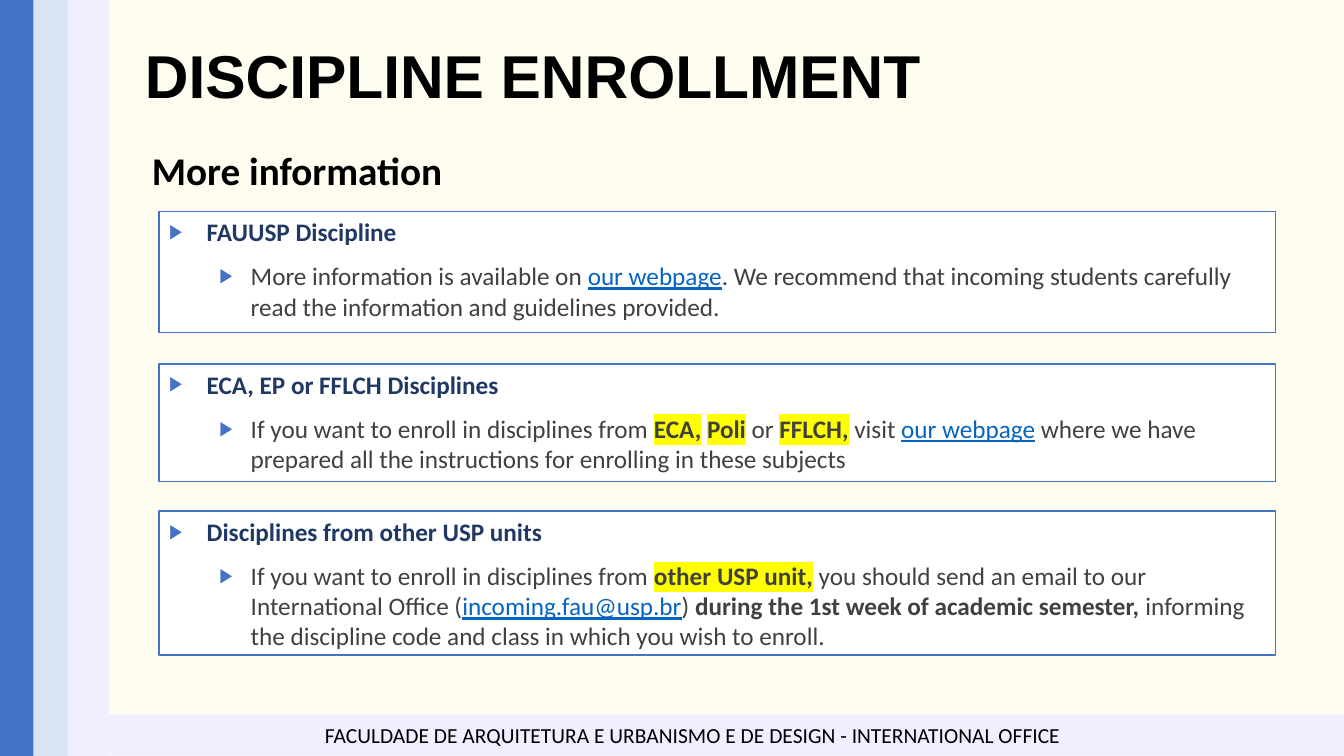
from dataclasses import dataclass

from lxml import etree
from pptx import Presentation
from pptx import util as u
from pptx.dml.color import RGBColor
from pptx.enum import shapes, text
from pptx.oxml import ns

BLUE = RGBColor(0x44, 0x72, 0xC4)
PALE_BLUE = RGBColor(0xDA, 0xE3, 0xF3)
LAVENDER = RGBColor(0xEF, 0xEF, 0xFF)
CREAM = RGBColor(0xFE, 0xFD, 0xF0)
WHITE = RGBColor(0xFF, 0xFF, 0xFF)
BLACK = RGBColor(0x00, 0x00, 0x00)
NAVY = RGBColor(0x20, 0x38, 0x64)
GREY = RGBColor(0x40, 0x40, 0x40)
LINK = RGBColor(0x05, 0x63, 0xC1)
YELLOW = RGBColor(0xFF, 0xFF, 0x00)

PAGE_WIDTH, PAGE_HEIGHT = 33.87, 19.05
CONTENT_WIDTH = 28.14
BAR_WIDTH = 1.04
CARD_LEFT = 4.01


@dataclass(frozen=True)
class Area:
    """Left, top, width and height in centimetres."""
    left: float
    top: float
    width: float
    height: float

    def lengths(self) -> tuple:
        return u.Cm(self.left), u.Cm(self.top), u.Cm(self.width), u.Cm(self.height)


@dataclass(frozen=True)
class Span:
    text: str
    color: RGBColor = GREY
    bold: bool = False
    underline: bool = False
    marked: bool = False


@dataclass(frozen=True)
class Bar:
    area: Area
    color: RGBColor


@dataclass(frozen=True)
class Card:
    top: float
    height: float
    heading: str
    body: tuple[Span, ...]


def link(words: str) -> Span:
    return Span(words, LINK, underline=True)


def marked(words: str) -> Span:
    return Span(words, bold=True, marked=True)


BARS = (
    Bar(Area(0, 0, BAR_WIDTH, PAGE_HEIGHT), BLUE),
    Bar(Area(0.84, 0, BAR_WIDTH, PAGE_HEIGHT), PALE_BLUE),
    Bar(Area(1.7, 0, BAR_WIDTH, PAGE_HEIGHT), LAVENDER),
    Bar(Area(2.73, 18, PAGE_WIDTH - 2.73, BAR_WIDTH), LAVENDER),
)

CARDS = (
    Card(5.33, 3.05, "FAUUSP Discipline", (
        Span("More information is available on "),
        link("our webpage"),
        Span(". We recommend that incoming students carefully read the "
             "information and guidelines provided."),
    )),
    Card(9.17, 2.97, "ECA, EP or FFLCH Disciplines", (
        Span("If you want to enroll in disciplines from "),
        marked("ECA,"),
        Span(" "),
        marked("Poli"),
        Span(" or "),
        marked("FFLCH,"),
        Span(" visit "),
        link("our webpage"),
        Span(" where we have prepared all the instructions for enrolling "
             "in these subjects"),
    )),
    Card(12.88, 3.63, "Disciplines from other USP units", (
        Span("If you want to enroll in disciplines from "),
        marked("other USP unit,"),
        Span(" you should send an email to our International Office ("),
        link("incoming.fau@usp.br"),
        Span(") "),
        Span("during the 1st week of academic semester,", bold=True),
        Span(" informing the discipline code and class in which you wish to enroll."),
    )),
)


def add_rectangle(page, area: Area, color: RGBColor):
    box = page.shapes.add_shape(shapes.MSO_SHAPE.RECTANGLE, *area.lengths())
    box.shadow.inherit = False
    box.fill.solid()
    box.fill.fore_color.rgb = color
    box.line.fill.background()
    return box


def add_color(parent, tag: str, color: RGBColor):
    element = etree.SubElement(parent, ns.qn(tag))
    etree.SubElement(element, ns.qn("a:srgbClr"), val=str(color))
    return element


def add_bullet(para, left: float, indent: float) -> None:
    properties = para._p.get_or_add_pPr()
    properties.set("marL", str(u.Cm(left)))
    properties.set("indent", str(u.Cm(indent)))
    add_color(properties, "a:buClr", BLUE)
    etree.SubElement(properties, ns.qn("a:buSzPct"), val="80000")
    etree.SubElement(properties, ns.qn("a:buFont"), typeface="Arial")
    etree.SubElement(properties, ns.qn("a:buChar"), char="▶")


def format_run(run, size: float, color: RGBColor, bold: bool, font: str = "Calibri") -> None:
    run.font.size = u.Pt(size)
    run.font.name = font
    run.font.bold = bold
    run.font.color.rgb = color


def add_span(para, span: Span) -> None:
    run = para.add_run()
    run.text = span.text
    format_run(run, 18, span.color, span.bold)
    if span.underline:
        run.font.underline = True
    if span.marked:
        properties = run._r.get_or_add_rPr()
        highlight = add_color(properties, "a:highlight", YELLOW)
        properties.find(ns.qn("a:solidFill")).addnext(highlight)


def add_card(page, card: Card) -> None:
    box = add_rectangle(page, Area(CARD_LEFT, card.top, CONTENT_WIDTH, card.height), WHITE)
    box.line.color.rgb = BLUE
    box.line.width = u.Pt(1)
    frame = box.text_frame
    frame.word_wrap = True
    frame.vertical_anchor = text.MSO_ANCHOR.TOP
    heading, body = frame.paragraphs[0], frame.add_paragraph()
    body.level = 1
    for para in (heading, body):
        para.alignment = text.PP_ALIGN.LEFT
        para.space_before = u.Pt(10)
    add_bullet(heading, 0.95, -0.95)
    add_bullet(body, 2.06, -0.79)
    add_span(heading, Span(card.heading, NAVY, bold=True))
    for span in card.body:
        add_span(body, span)


def add_label(page, area: Area, words: str, size: float, bold: bool,
              spacing: float, alignment) -> None:
    frame = page.shapes.add_textbox(*area.lengths()).text_frame
    frame.word_wrap = True
    frame.text = words
    para = frame.paragraphs[0]
    para.alignment = alignment
    para.line_spacing = spacing
    para.space_before = u.Pt(10)
    format_run(para.runs[0], size, BLACK, bold)


def set_title(page, words: str) -> None:
    title = page.shapes.title
    title.left, title.top, title.width, title.height = Area(
        3.4, 1.02, CONTENT_WIDTH, 1.96).lengths()
    frame = title.text_frame
    frame.text = words
    frame.word_wrap = True
    frame.vertical_anchor = text.MSO_ANCHOR.MIDDLE
    para = frame.paragraphs[0]
    para.alignment = text.PP_ALIGN.LEFT
    para.line_spacing = 0.9
    format_run(para.runs[0], 43.2, BLACK, True, "Arial")


def main() -> None:
    deck = Presentation()
    deck.slide_width, deck.slide_height = u.Cm(PAGE_WIDTH), u.Cm(PAGE_HEIGHT)
    page = deck.slides.add_slide(deck.slide_layouts[5])
    page.background.fill.solid()
    page.background.fill.fore_color.rgb = CREAM
    set_title(page, "DISCIPLINE ENROLLMENT")
    add_label(page, Area(3.58, 3.78, CONTENT_WIDTH, 1.3), "More information",
              28, True, 0.8, text.PP_ALIGN.LEFT)
    for bar in BARS:
        add_rectangle(page, bar.area, bar.color)
    add_label(page, Area(7.39, 18.26, 20.14, 0.74),
              "FACULDADE DE ARQUITETURA E URBANISMO E DE DESIGN - INTERNATIONAL OFFICE",
              15.3, False, 0.7, text.PP_ALIGN.CENTER)
    for card in CARDS:
        add_card(page, card)
    deck.save("out.pptx")


if __name__ == "__main__":
    main()
